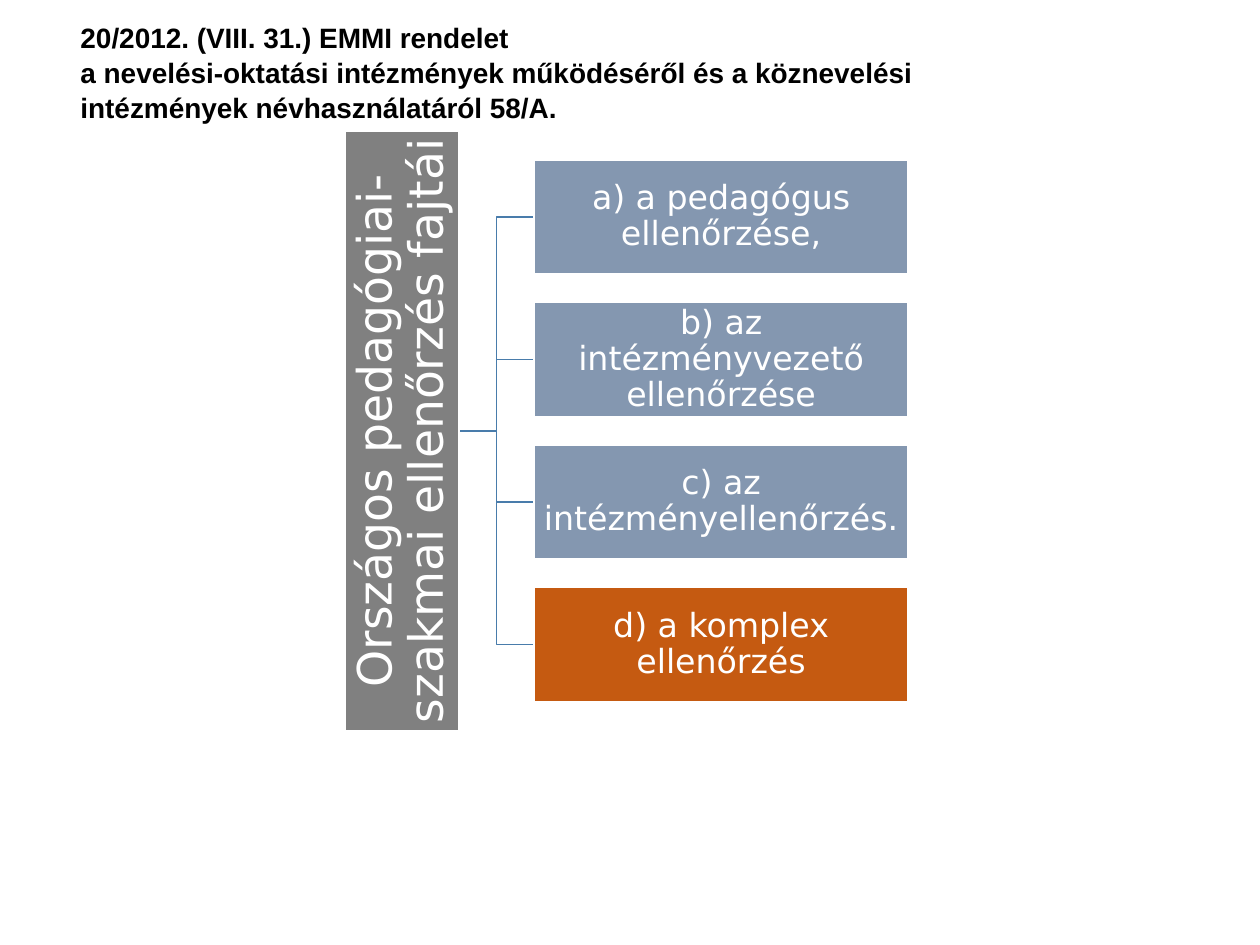
from dataclasses import dataclass

from lxml.etree import SubElement
from pptx import Presentation
from pptx.dml.color import RGBColor
from pptx.enum.shapes import MSO_CONNECTOR, MSO_SHAPE
from pptx.enum.text import MSO_ANCHOR, PP_ALIGN
from pptx.oxml.ns import qn
from pptx.util import Pt


@dataclass(frozen=True)
class Theme:
    ink: RGBColor = RGBColor(0, 0, 0)
    white: RGBColor = RGBColor(255, 255, 255)
    root: RGBColor = RGBColor.from_string("808080")
    branch: RGBColor = RGBColor.from_string("8497B0")
    highlight: RGBColor = RGBColor.from_string("C55A11")
    link: RGBColor = RGBColor.from_string("497CAB")
    title_font: str = "Arial"
    diagram_font: str = "DejaVu Sans"
    title_size: int = 16
    root_size: int = 27
    branch_size: int = 19


THEME = Theme()

TITLE_LINES = [
    "20/2012. (VIII. 31.) EMMI rendelet",
    "a nevelési-oktatási intézmények működéséről és a köznevelési\v"
    "intézmények névhasználatáról 58/A.",
]
ROOT_LABEL = "Országos pedagógiai-szakmai ellenőrzés fajtái"
BRANCHES = [
    ("a) a pedagógus ellenőrzése,", THEME.branch),
    ("b) az intézményvezető ellenőrzése", THEME.branch),
    ("c) az intézményellenőrzés.", THEME.branch),
    ("d) a komplex ellenőrzés", THEME.highlight),
]

BOX_HEIGHT = 65.2
ROOT_LENGTH = 342.7
ROOT_CENTER_X = 229.7
BRANCH_LEFT = 305.2
BRANCH_WIDTH = 213.8
FIRST_BRANCH_Y = 124.1
BRANCH_PITCH = 81.4
ROOT_CENTER_Y = FIRST_BRANCH_Y + BRANCH_PITCH * (len(BRANCHES) - 1) / 2


def set_font(paragraph, name, size, color, bold=False):
    font = paragraph.font
    font.name = name
    font.size = Pt(size)
    font.bold = bold
    font.color.rgb = color


def add_title(slide):
    frame = slide.shapes.add_textbox(Pt(38.9), Pt(7.9), Pt(500.4), Pt(87.1)).text_frame
    frame.word_wrap = True
    frame.vertical_anchor = MSO_ANCHOR.MIDDLE
    frame.margin_bottom = Pt(25)
    frame.text = "\n".join(TITLE_LINES)
    for paragraph in frame.paragraphs:
        paragraph.line_spacing = 1.04
        set_font(paragraph, THEME.title_font, THEME.title_size, THEME.ink, bold=True)


def add_box(slide, label, center_x, center_y, width, fill, size, inset, rotation=0):
    box = slide.shapes.add_shape(
        MSO_SHAPE.RECTANGLE,
        Pt(center_x - width / 2), Pt(center_y - BOX_HEIGHT / 2),
        Pt(width), Pt(BOX_HEIGHT),
    )
    box.rotation = rotation
    box.shadow.inherit = False
    box.fill.solid()
    box.fill.fore_color.rgb = fill
    box.line.color.rgb = THEME.white
    box.line.width = Pt(1)
    frame = box.text_frame
    frame.word_wrap = True
    frame.vertical_anchor = MSO_ANCHOR.MIDDLE
    frame.margin_left = frame.margin_right = Pt(inset)
    frame.margin_top = frame.margin_bottom = Pt(inset)
    frame.text = label
    paragraph = frame.paragraphs[0]
    paragraph.alignment = PP_ALIGN.CENTER
    paragraph.line_spacing = 0.9
    set_font(paragraph, THEME.diagram_font, size, THEME.white)


def add_link(slide, branch_y):
    link = slide.shapes.add_connector(
        MSO_CONNECTOR.ELBOW,
        Pt(ROOT_CENTER_X + BOX_HEIGHT / 2), Pt(ROOT_CENTER_Y),
        Pt(BRANCH_LEFT), Pt(branch_y),
    )
    link.line.color.rgb = THEME.link
    link.line.width = Pt(1)
    SubElement(link._element.spPr, qn("a:effectLst"))


def add_diagram(slide):
    branch_ys = [FIRST_BRANCH_Y + i * BRANCH_PITCH for i in range(len(BRANCHES))]
    for branch_y in branch_ys:
        add_link(slide, branch_y)
    add_box(slide, ROOT_LABEL, ROOT_CENTER_X, ROOT_CENTER_Y, ROOT_LENGTH,
            THEME.root, THEME.root_size, inset=1.4, rotation=270)
    for (label, fill), branch_y in zip(BRANCHES, branch_ys):
        add_box(slide, label, BRANCH_LEFT + BRANCH_WIDTH / 2, branch_y, BRANCH_WIDTH,
                fill, THEME.branch_size, inset=0.9)


def main():
    presentation = Presentation()
    presentation.slide_width = Pt(720)
    presentation.slide_height = Pt(540)
    slide = presentation.slides.add_slide(presentation.slide_layouts[6])
    add_title(slide)
    add_diagram(slide)
    presentation.save("out.pptx")


if __name__ == "__main__":
    main()
